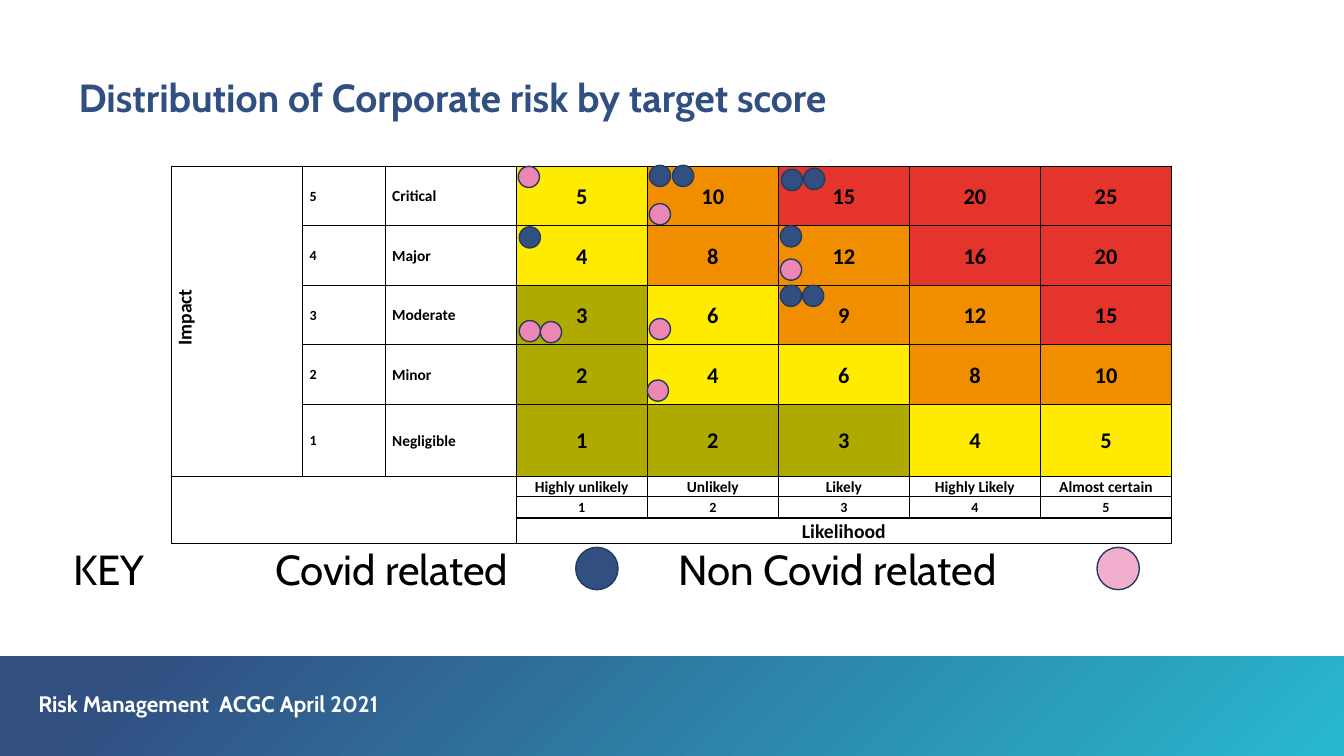
from lxml.etree import SubElement
from pptx import Presentation
from pptx.dml.color import RGBColor
from pptx.enum.shapes import MSO_SHAPE as Shape
from pptx.enum.text import MSO_ANCHOR as Anchor, PP_ALIGN as Align
from pptx.oxml.ns import qn
from pptx.util import Inches, Pt

NAVY = RGBColor(0x32, 0x4F, 0x82)
OUTLINE = RGBColor(0x25, 0x3A, 0x60)
TEAL = RGBColor(0x28, 0xB8, 0xCE)
PINK = RGBColor(0xEC, 0x87, 0xB4)
PALE_PINK = RGBColor(0xF2, 0xAF, 0xCD)
OLIVE = RGBColor(0xAF, 0xAA, 0x00)
YELLOW = RGBColor(0xFF, 0xEB, 0x00)
ORANGE = RGBColor(0xF0, 0x8E, 0x00)
RED = RGBColor(0xE4, 0x34, 0x2B)
BLACK = RGBColor(0, 0, 0)
WHITE = RGBColor(0xFF, 0xFF, 0xFF)

IMPACTS = ["Critical", "Major", "Moderate", "Minor", "Negligible"]
LIKELIHOODS = ["Highly unlikely", "Unlikely", "Likely", "Highly Likely", "Almost certain"]
COLUMN_WIDTHS = [1.3, 0.82] + [1.3] * 6
ROW_HEIGHTS = [0.59] * 4 + [0.72, 0.2, 0.21, 0.25]
BAND_LIMITS = [(3, OLIVE), (6, YELLOW), (12, ORANGE), (25, RED)]

MARKER_SIZE = 0.21
KEY_SIZE = 0.42
KEY_TABS = [1, 2, 5, 6]
COVID_MARKERS = [(5.15, 2.25), (6.44, 1.64), (6.67, 1.64), (7.75, 1.68),
                 (7.97, 1.67), (7.74, 2.24), (7.74, 2.83), (7.96, 2.83)]
OTHER_MARKERS = [(5.14, 1.65), (6.44, 2.02), (7.74, 2.57), (6.44, 3.16),
                 (5.15, 3.18), (5.36, 3.19), (6.42, 3.77)]


def set_all(target, values):
    """Set every attribute named in a dict of values."""
    for name, value in values.items():
        setattr(target, name, value)


def write(frame, text, para_format, font_format, color):
    """Write one formatted paragraph in a text frame."""
    para = frame.paragraphs[0]
    set_all(para, para_format)
    span = para.add_run()
    span.text = text
    set_all(span.font, font_format)
    span.font.color.rgb = color


def add_text(page, place, text, size, color, bold, margins, line_spacing):
    """Add a wrapping text box in the heading typeface."""
    box = page.shapes.add_textbox(*map(Inches, place))
    side, top = map(Inches, margins)
    set_all(box.text_frame, {"word_wrap": True, "margin_left": side, "margin_right": side,
                             "margin_top": top, "margin_bottom": top})
    write(box.text_frame, text, {"line_spacing": line_spacing},
          {"name": "Cabin", "size": Pt(size), "bold": bold}, color)
    return box


def add_tab_stops(box, positions):
    """Give the first paragraph of a box left tab stops, in inches."""
    properties = box.text_frame.paragraphs[0]._p.get_or_add_pPr()
    stops = SubElement(properties, qn("a:tabLst"))
    for position in positions:
        SubElement(stops, qn("a:tab"), pos=str(Inches(position)), algn="l")


def add_footer_band(page):
    """Add the gradient band along the foot of the page."""
    band = page.shapes.add_shape(Shape.RECTANGLE, *map(Inches, (0, 6.51, 13.33, 0.99)))
    band.shadow.inherit = False
    band.line.fill.background()
    band.fill.gradient()
    band.fill.gradient_angle = 315
    for stop, position, color in zip(band.fill.gradient_stops, (0.1, 1), (NAVY, TEAL)):
        stop.position = position
        stop.color.rgb = color


def add_marker(page, left, top, size, color):
    """Add one outlined risk marker."""
    marker = page.shapes.add_shape(Shape.OVAL, *map(Inches, (left, top, size, size)))
    marker.shadow.inherit = False
    marker.fill.solid()
    marker.fill.fore_color.rgb = color
    marker.line.color.rgb = OUTLINE
    marker.line.width = Pt(1)


def add_borders(cell):
    """Draw thin black lines on all four sides of a cell."""
    properties = cell._tc.get_or_add_tcPr()
    for side in ("a:lnL", "a:lnR", "a:lnT", "a:lnB"):
        line = SubElement(properties, qn(side), w=str(Pt(1)))
        fill = SubElement(line, qn("a:solidFill"))
        SubElement(fill, qn("a:srgbClr"), val=str(BLACK))


def fill_cell(cell, text, size, align=Align.CENTER):
    """Write bold text in a table cell."""
    write(cell.text_frame, text,
          {"alignment": align, "line_spacing": 1.07, "space_after": Pt(8)},
          {"name": "Calibri", "size": Pt(size), "bold": True}, BLACK)


def make_grid(page):
    """Add the empty bordered table with its merged areas."""
    frame = page.shapes.add_table(len(ROW_HEIGHTS), len(COLUMN_WIDTHS), Inches(1.7),
                                  Inches(1.65), Inches(sum(COLUMN_WIDTHS)),
                                  Inches(sum(ROW_HEIGHTS)))
    grid = frame.table
    set_all(grid, {"first_row": False, "horz_banding": False})
    for column, width in zip(grid.columns, COLUMN_WIDTHS):
        column.width = Inches(width)
    for row, height in zip(grid.rows, ROW_HEIGHTS):
        row.height = Inches(height)
    for cell in grid.iter_cells():
        set_all(cell, {"vertical_anchor": Anchor.MIDDLE, "margin_top": 0, "margin_bottom": 0,
                       "margin_left": Inches(0.07), "margin_right": Inches(0.07)})
        add_borders(cell)
        cell.fill.background()
    for first, last in (((0, 0), (4, 0)), ((5, 0), (7, 2)), ((7, 3), (7, 7))):
        grid.cell(*first).merge(grid.cell(*last))
    return grid


def add_risk_matrix(page):
    """Add the impact by likelihood score table."""
    grid = make_grid(page)
    impact_cell = grid.cell(0, 0)
    fill_cell(impact_cell, "Impact", 14)
    impact_cell._tc.get_or_add_tcPr().set("vert", "vert270")
    impact_cell.text_frame.paragraphs[0]._p.get_or_add_pPr().set("marL", str(Inches(0.08)))
    for row, impact_name in enumerate(IMPACTS):
        impact = len(IMPACTS) - row
        fill_cell(grid.cell(row, 1), str(impact), 10, Align.LEFT)
        fill_cell(grid.cell(row, 2), impact_name, 11, Align.LEFT)
        for likelihood in range(1, len(LIKELIHOODS) + 1):
            score = impact * likelihood
            cell = grid.cell(row, likelihood + 2)
            fill_cell(cell, str(score), 16)
            cell.fill.solid()
            cell.fill.fore_color.rgb = next(color for limit, color in BAND_LIMITS
                                            if score <= limit)
    for likelihood, name in enumerate(LIKELIHOODS, 1):
        fill_cell(grid.cell(5, likelihood + 2), name, 11)
        fill_cell(grid.cell(6, likelihood + 2), str(likelihood), 10)
    fill_cell(grid.cell(7, 3), "Likelihood", 14)


def main():
    """Build the risk distribution slide and save it."""
    deck = Presentation()
    set_all(deck, {"slide_width": Inches(13.33), "slide_height": Inches(7.5)})
    page = deck.slides.add_slide(deck.slide_layouts[6])
    add_footer_band(page)
    add_text(page, (0.38, 6.88, 3.93, 0.24), "Risk Management  ACGC April 2021",
             16, WHITE, True, (0, 0), 0.9)
    add_text(page, (0.78, 0.78, 11.77, 0.43), "Distribution of Corporate risk by target score",
             28, NAVY, True, (0, 0), 0.9)
    add_risk_matrix(page)
    key = add_text(page, (0.63, 5.34, 11.01, 0.61),
                   "KEY\t\tCovid related\t\tNon Covid related",
                   30, BLACK, False, (0.1, 0.05), 1.0)
    add_tab_stops(key, KEY_TABS)
    for markers, color in ((COVID_MARKERS, NAVY), (OTHER_MARKERS, PINK)):
        for left, top in markers:
            add_marker(page, left, top, MARKER_SIZE, color)
    for left, color in ((5.71, NAVY), (10.88, PALE_PINK)):
        add_marker(page, left, 5.43, KEY_SIZE, color)
    deck.save("out.pptx")


if __name__ == "__main__":
    main()
